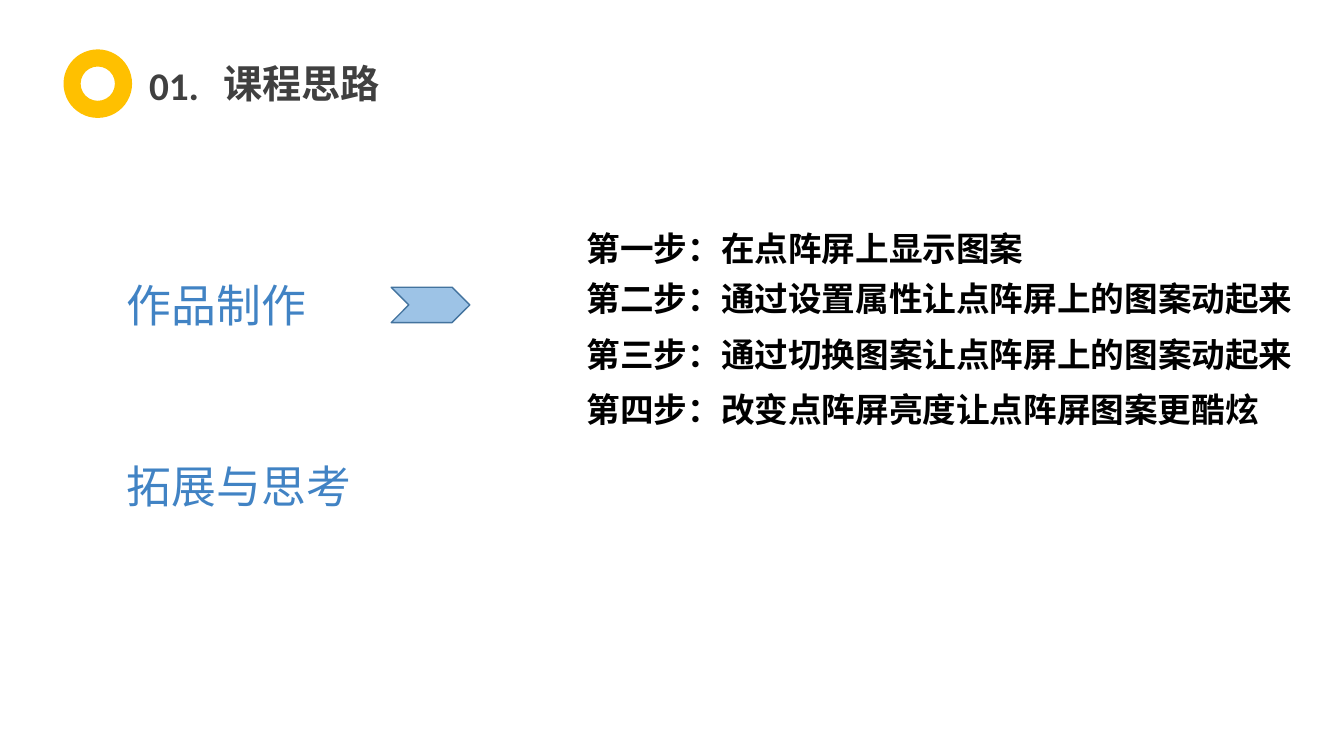
from pptx import Presentation
from pptx.dml.color import RGBColor
from pptx.enum.shapes import MSO_SHAPE
from pptx.enum.text import MSO_AUTO_SIZE, PP_ALIGN
from pptx.util import Inches, Pt

FONT = "Calibri"
TITLE_GREY = "404040"
TOPIC_BLUE = "4183C4"
STEPS = [
    (0, "第一步：在点阵屏上显示图案", 4.6),
    (0.5, "第二步：通过设置属性让点阵屏上的图案动起来", 7.31),
    (1.05, "第三步：通过切换图案让点阵屏上的图案动起来", 7.31),
    (1.6, "第四步：改变点阵屏亮度让点阵屏图案更酷炫", 6.97),
]


def color(hex_string):
    """Turn a hex string into a colour."""
    return RGBColor.from_string(hex_string)


def add_label(slide, text, left, top, width, height, size, hex_color,
              bold=False, align=PP_ALIGN.LEFT):
    """Add a one-line text box that fits its text."""
    box = slide.shapes.add_textbox(
        Inches(left), Inches(top), Inches(width), Inches(height))
    frame = box.text_frame
    frame.word_wrap = False
    frame.auto_size = MSO_AUTO_SIZE.SHAPE_TO_FIT_TEXT
    paragraph = frame.paragraphs[0]
    paragraph.alignment = align
    run = paragraph.add_run()
    run.text = text
    run.font.name = FONT
    run.font.size = Pt(size)
    run.font.bold = bold
    run.font.color.rgb = color(hex_color)


def add_figure(slide, preset, left, top, width, height, fill, line=None):
    """Add a flat preset shape with an optional outline."""
    shape = slide.shapes.add_shape(
        preset, Inches(left), Inches(top), Inches(width), Inches(height))
    shape.shadow.inherit = False
    shape.fill.solid()
    shape.fill.fore_color.rgb = color(fill)
    if line:
        shape.line.color.rgb = color(line)
        shape.line.width = Pt(1)
    else:
        shape.line.fill.background()


def add_heading(slide, left, top):
    """Place the ring, section number and section title."""
    add_label(slide, "课程思路", left + 1.47, top + 0.05, 1.78, 0.57,
              28, TITLE_GREY, True, PP_ALIGN.CENTER)
    add_label(slide, "01.", left + 0.75, top + 0.07, 0.75, 0.57,
              28, TITLE_GREY, True)
    add_figure(slide, MSO_SHAPE.DONUT, left, top, 0.68, 0.68, "FFC000")


def add_topics(slide, left, top):
    """Place the two topics and the chevron beside the first."""
    add_label(slide, "作品制作", left, top, 2, 0.64, 32, TOPIC_BLUE)
    add_figure(slide, MSO_SHAPE.CHEVRON, left + 2.72, top + 0.14,
               0.78, 0.35, "9DC3E6", "43739E")
    add_label(slide, "拓展与思考", left, top + 1.79, 2.45, 0.64,
              32, TOPIC_BLUE)


def add_steps(slide, left, top):
    """Place the list of production steps."""
    for offset, text, width in STEPS:
        add_label(slide, text, left, top + offset, width, 0.5,
                  24, "000000", True)


def main():
    """Build and save the slide."""
    presentation = Presentation()
    presentation.slide_width = Inches(13.33)
    presentation.slide_height = Inches(7.5)
    slide = presentation.slides.add_slide(presentation.slide_layouts[6])
    add_heading(slide, 0.63, 0.49)
    add_topics(slide, 1.16, 2.71)
    add_steps(slide, 5.72, 2.21)
    presentation.save("out.pptx")


if __name__ == "__main__":
    main()
